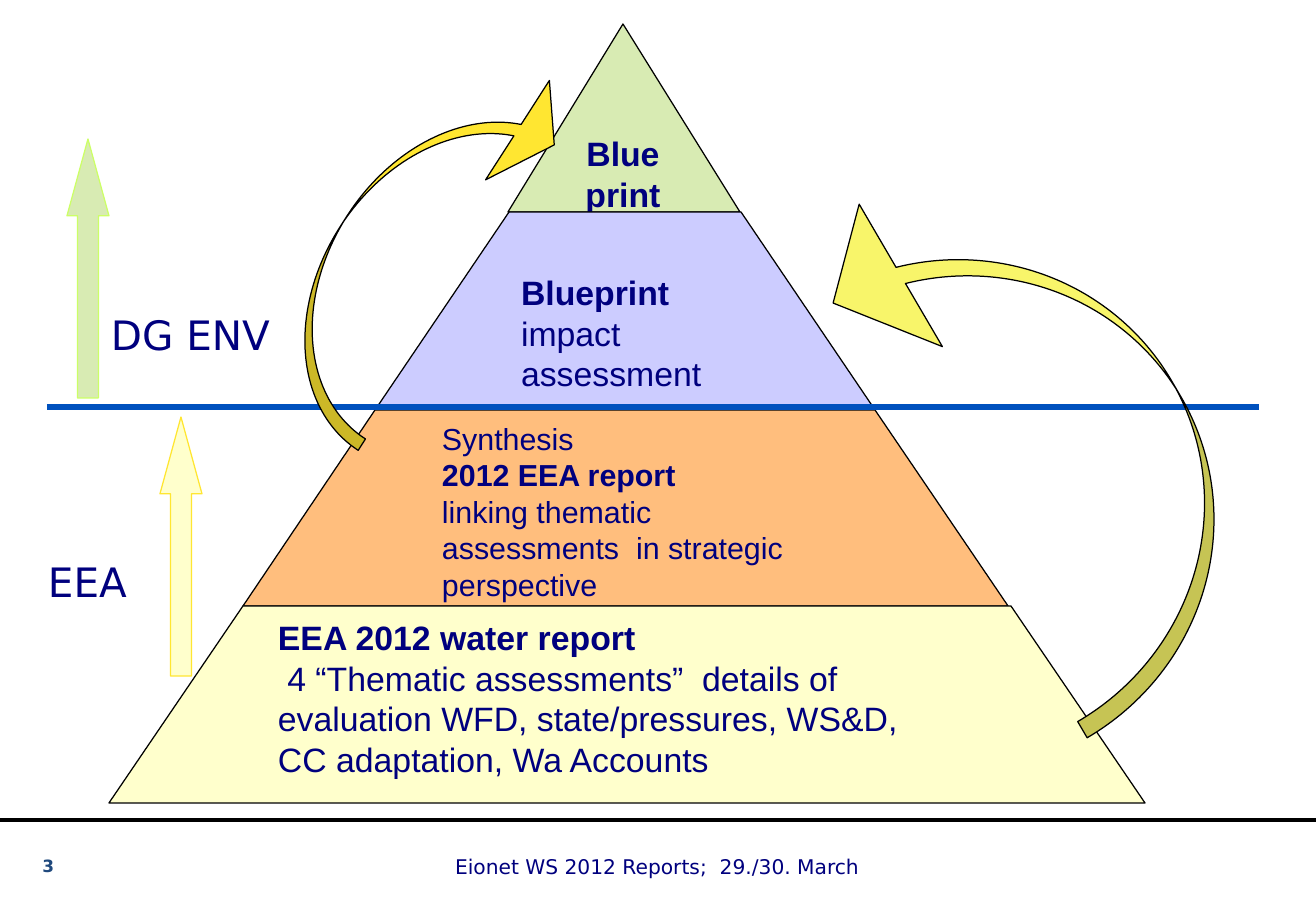
from lxml import etree
from pptx import Presentation
from pptx.dml.color import RGBColor
from pptx.enum.shapes import MSO_CONNECTOR, MSO_SHAPE
from pptx.enum.text import MSO_ANCHOR, PP_ALIGN
from pptx.oxml.ns import qn
from pptx.util import Emu, Pt

SCALE = 914400 / 121.5
NAVY = RGBColor(0x00, 0x00, 0x7E)
SLATE = RGBColor(0x1F, 0x49, 0x7D)
BLUE = RGBColor(0x00, 0x51, 0xBE)
BLACK = RGBColor(0x00, 0x00, 0x00)
WHITE = RGBColor(0xFF, 0xFF, 0xFF)
GREEN = RGBColor(0xD8, 0xEB, 0xB3)
LIME = RGBColor(0xCC, 0xFF, 0x66)
LILAC = RGBColor(0xCC, 0xCC, 0xFF)
ORANGE = RGBColor(0xFF, 0xBE, 0x7D)
CREAM = RGBColor(0xFF, 0xFF, 0xCC)
GOLD = RGBColor(0xFF, 0xE6, 0x31)
YELLOW = RGBColor(0xF8, 0xF5, 0x6A)
SANS = "DejaVu Sans"


def px(n):
    return Emu(round(n * SCALE))


def write(shape, lines, size=24, font=SANS, color=NAVY, bold=False, wrap=False,
          align=PP_ALIGN.LEFT, anchor=MSO_ANCHOR.TOP, pad=(12, 6, 12, 6)):
    frame = shape.text_frame
    frame.word_wrap = wrap
    frame.vertical_anchor = anchor
    (frame.margin_left, frame.margin_top,
     frame.margin_right, frame.margin_bottom) = map(px, pad)
    para = frame.paragraphs[0]
    para.alignment = align
    for i, line in enumerate(lines):
        if i:
            para.add_line_break()
        for text, heavy in [(line, bold)] if isinstance(line, str) else line:
            run = para.add_run()
            run.text = text
            run.font.size = Pt(size)
            run.font.name = font
            run.font.bold = heavy
            run.font.color.rgb = color


def label(slide, box, lines, **style):
    write(slide.shapes.add_textbox(*map(px, box)), lines, **style)


def paint(shape, fill, line=None):
    shape.shadow.inherit = False
    shape.fill.solid()
    shape.fill.fore_color.rgb = fill
    if line is None:
        shape.line.fill.background()
    else:
        shape.line.color.rgb = line
        shape.line.width = Pt(0.75)


def rule(slide, left, right, y, color, width):
    line = slide.shapes.add_connector(
        MSO_CONNECTOR.STRAIGHT, px(left), px(y), px(right), px(y))
    line.line.color.rgb = color
    line.line.width = Pt(width)
    etree.SubElement(line._element.spPr, qn("a:effectLst"))


def shape(slide, kind, box, fill, line=None, adjust=(), turn=0, flip=False):
    item = slide.shapes.add_shape(kind, *map(px, box))
    paint(item, fill, line)
    for i, value in enumerate(adjust):
        item.adjustments[i] = value
    item.rotation = turn
    if flip:
        item._element.spPr.xfrm.set("flipH", "1")
    return item


def tier(slide, x, y, top, base, ends, fill, lines, inset, **style):
    corners = [(top[0], ends[0]), (top[1], ends[0]),
               (base[1], ends[1]), (base[0], ends[1])]
    points = [(px(x + a), px(y + b)) for a, b in dict.fromkeys(corners)]
    pen = slide.shapes.build_freeform(*points[0], scale=1.0)
    pen.add_line_segments(points[1:], close=True)
    item = pen.convert_to_shape()
    paint(item, fill, BLACK)
    left, drop, width = inset
    pad = (left - base[0], drop - ends[0], base[1] - left - width, 0)
    write(item, lines, font="Arial", wrap=True, pad=pad, **style)


def pyramid(slide, x, y):
    tier(slide, x, y, (514, 514), (399, 631), (0, 188), GREEN, ["Blueprint"],
         (474, 109, 80), size=20, bold=True, align=PP_ALIGN.CENTER)
    tier(slide, x, y, (400, 632), (266, 766), (188, 386), LILAC,
         [[("Blueprint", True), (" impact assessment", False)]],
         (412, 248, 206), size=20)
    tier(slide, x, y, (266, 766), (134, 899), (386, 582), ORANGE,
         ["Synthesis ", [("2012 EEA report", True)],
          "linking thematic assessments  in strategic perspective"],
         (333, 396, 362), size=18)
    tier(slide, x, y, (134, 902), (0, 1036), (582, 779), CREAM,
         [[("EEA 2012 water report ", True)],
          " 4 “Thematic assessments”  details of evaluation WFD, "
          "state/pressures, WS&D, CC adaptation, Wa Accounts"],
         (169, 593, 652), size=20)


def levels(slide, x, y):
    rule(slide, x, x + 1212, y + 268, BLUE, 3)
    env = shape(slide, MSO_SHAPE.RECTANGLE, (x + 52, y + 134, 197, 122), WHITE)
    write(env, ["DG ENV"], anchor=MSO_ANCHOR.MIDDLE)
    label(slide, (x - 11, y + 412, 104, 61), ["EEA"])
    for left, top, fill, line in ((20, 0, GREEN, LIME), (113, 278, CREAM, GOLD)):
        shape(slide, MSO_SHAPE.UP_ARROW, (x + left, y + top, 42, 259),
              fill, line, (0.5, 1.83))


def loops(slide, x, y):
    kind = MSO_SHAPE.CURVED_RIGHT_ARROW
    shape(slide, kind, (x + 575, y + 103, 253, 586), YELLOW, BLACK,
          (0.074, 0.652, 0.286), 149.7)
    shape(slide, kind, (x, y, 136, 422), GOLD, BLACK,
          (0.099, 0.869, 0.286), 212.7, True)


def footer(slide, x, y, width):
    rule(slide, x, x + width, y, BLACK, 2.25)
    label(slide, (x + 443, y + 28, 445, 36),
          ["Eionet WS 2012 Reports;  29./30. March"], size=12)
    label(slide, (x - 33, y + 30, 99, 61), ["3"], size=10, color=SLATE,
          bold=True, wrap=True, align=PP_ALIGN.RIGHT)


def main():
    deck = Presentation()
    deck.slide_width, deck.slide_height = px(1316), px(911)
    slide = deck.slides.add_slide(deck.slide_layouts[6])
    footer(slide, 0, 820, 1316)
    pyramid(slide, 109, 24)
    levels(slide, 47, 139)
    loops(slide, 347, 25)
    deck.save("out.pptx")


if __name__ == "__main__":
    main()
